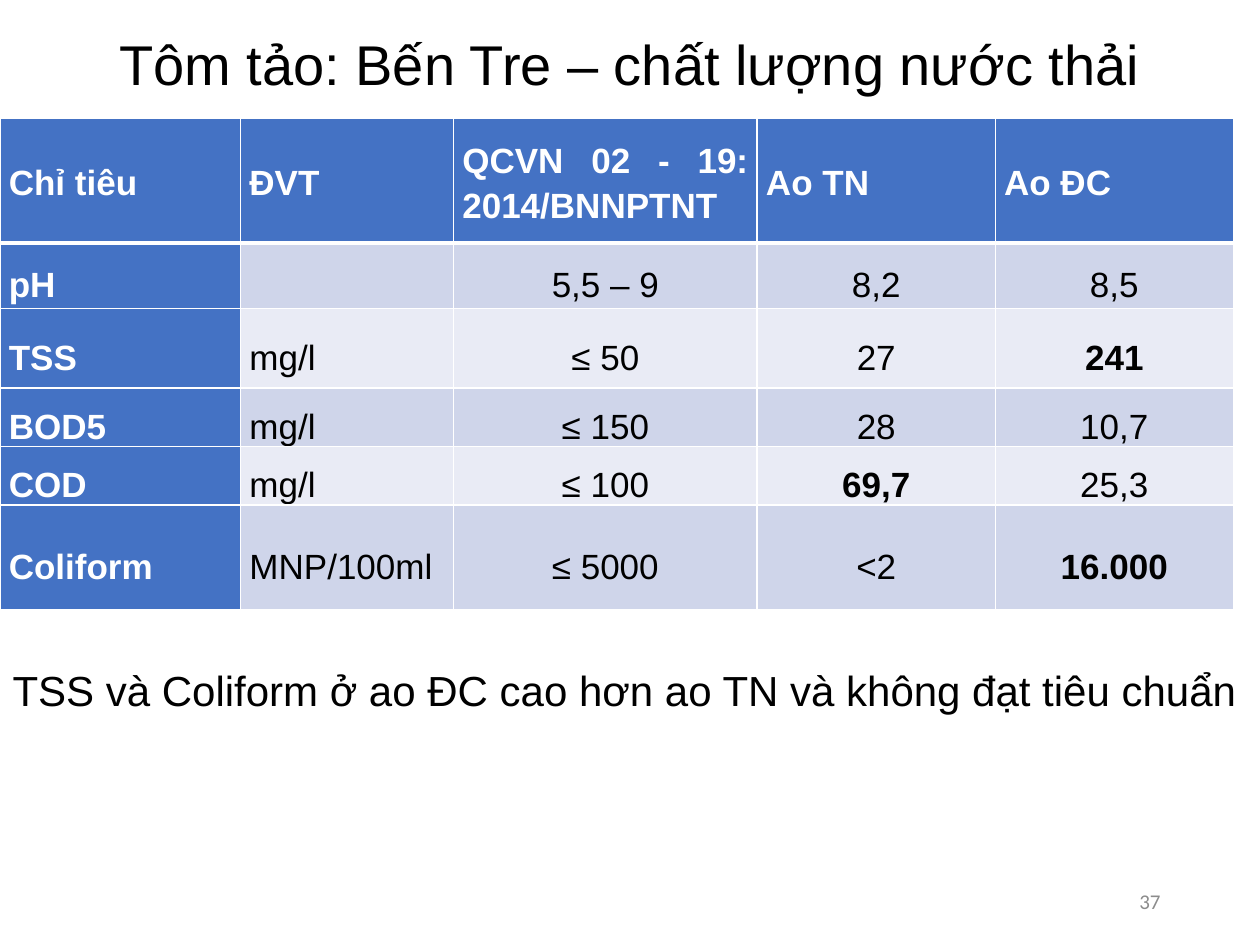
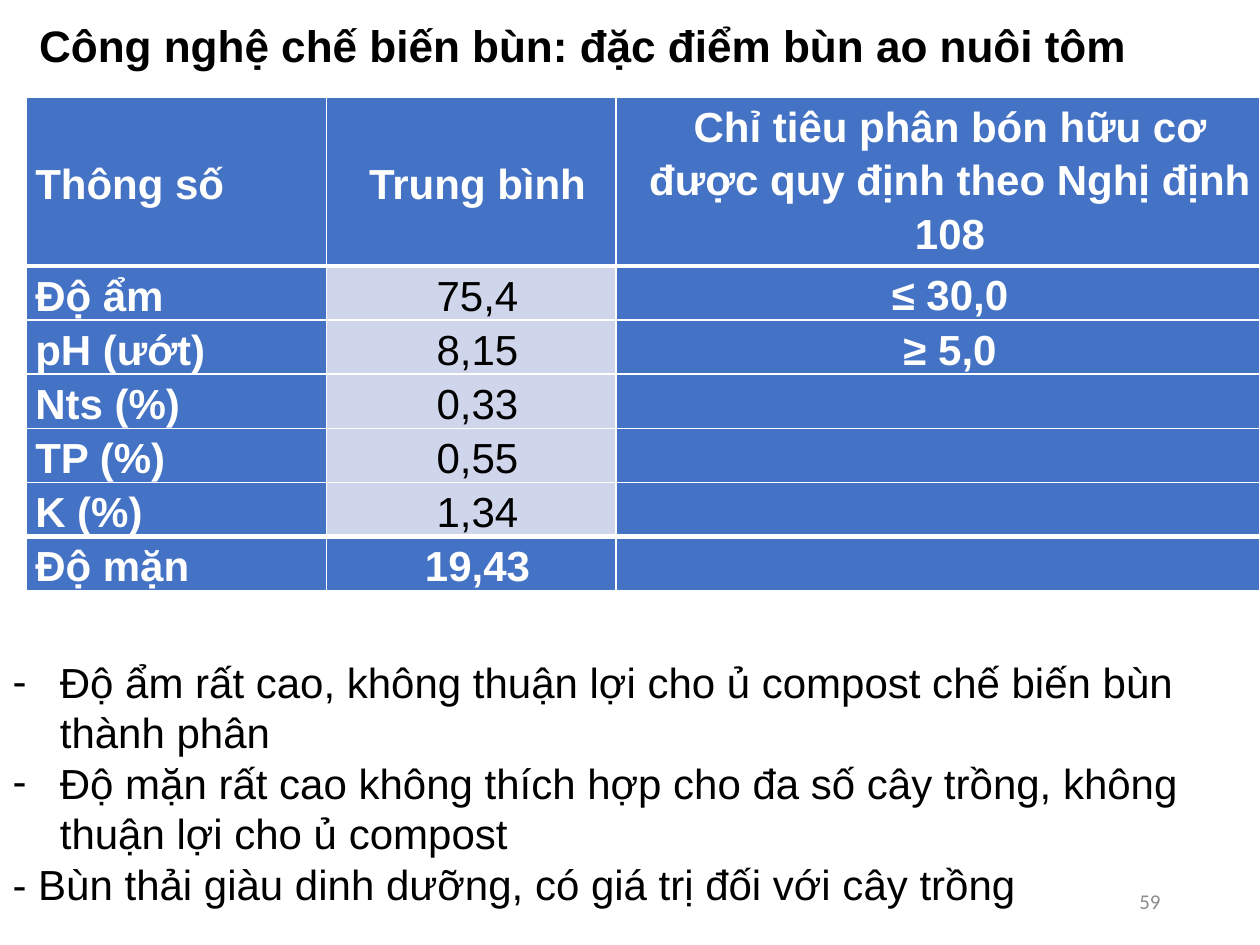
from lxml.etree import SubElement as Sub
from pptx import Presentation
from pptx.dml.color import RGBColor as RGB
from pptx.enum.text import MSO_ANCHOR as Anchor, MSO_AUTO_SIZE as Fit, PP_ALIGN as Align
from pptx.oxml.ns import qn
from pptx.util import Inches, Pt

BLACK = RGB(0x00, 0x00, 0x00)
WHITE = RGB(0xFF, 0xFF, 0xFF)
GREY = RGB(0x8C, 0x8C, 0x8C)
BLUE = RGB(0x44, 0x72, 0xC4)
BAND = RGB(0xCF, 0xD5, 0xEA)
PALE = RGB(0xE9, 0xEB, 0xF5)

# Grid: 100 columns by 75 rows of square units
deck = Presentation()
deck.slide_width, deck.slide_height = Inches(10), Inches(7.5)
UNIT = deck.slide_width / 100


def write(para, text, size=24, color=BLACK, bold=False, font="Arial",
          align=Align.LEFT, line=1.0, before=0, left=0, hang=0, mark=None):
    """Fill one paragraph with formatted text; left and hang are in grid units."""
    para.alignment, para.line_spacing, para.space_before = align, line, Pt(before)
    props = para._p.get_or_add_pPr()
    props.set("marL", str(int(left * UNIT)))
    props.set("indent", str(int(-hang * UNIT)))
    if mark:
        Sub(props, qn("a:buChar")).set("char", mark)
    else:
        Sub(props, qn("a:buNone"))
    run = para.add_run()
    run.text = text
    run.font.name, run.font.size, run.font.bold = font, Pt(size), bold
    run.font.color.rgb = color


def place(shape, box, anchor):
    """Set a text shape on the grid."""
    shape.left, shape.top, shape.width, shape.height = [int(n * UNIT) for n in box]
    frame = shape.text_frame
    frame.word_wrap, frame.auto_size, frame.vertical_anchor = True, Fit.NONE, anchor
    return frame


# Content of the two slides
water = dict(
    title="Tôm tảo: Bến Tre – chất lượng nước thải",
    head=dict(size=32, align=Align.CENTER), head_box=(6.9, 1.3, 86.2, 8.1),
    spot=(0, 9.4), cols=(19.1, 16.9, 24.1, 18.9, 18.9),
    rows=(9.9, 5.2, 6.3, 3.9, 3.9, 8.3),
    size=20, pad=0.7, line=1.5, before=0, lefts=(0,) * 5,
    aligns=(Align.JUSTIFY,) * 2 + (Align.CENTER,) * 3,
    head_aligns=(Align.JUSTIFY,) * 5, anchors=(Anchor.MIDDLE,) * 5,
    blue_cols={0}, foot=False, bands=(PALE, BAND), strong={"241", "69,7", "16.000"},
    cells=[
        ("Chỉ tiêu", "ĐVT", "QCVN 02 - 19: 2014/BNNPTNT", "Ao TN", "Ao ĐC"),
        ("pH", "", "5,5 – 9", "8,2", "8,5"),
        ("TSS", "mg/l", "≤ 50", "27", "241"),
        ("BOD5", "mg/l", "≤ 150", "28", "10,7"),
        ("COD", "mg/l", "≤ 100", "69,7", "25,3"),
        ("Coliform", "MNP/100ml", "≤ 5000", "<2", "16.000"),
    ],
    note_box=(0, 52.2, 100, 5),
    notes=[("TSS và Coliform ở ao ĐC cao hơn ao TN và không đạt tiêu chuẩn", {})],
    page="37")

dash = dict(left=3.75, hang=3.75, mark="-")
mud_aligns = (Align.JUSTIFY, Align.CENTER, Align.CENTER)
mud = dict(
    title="Công nghệ chế biến bùn: đặc điểm bùn ao nuôi tôm",
    head=dict(size=25.2, bold=True), head_box=(2.1, 0, 97.9, 7.7),
    spot=(2.1, 7.7), cols=(23.8, 23, 51.1), rows=(13.4,) + (4.3,) * 6,
    size=24, pad=0, line=1.15, before=3, lefts=(0.7, 1, 1.9),
    aligns=mud_aligns, head_aligns=mud_aligns,
    anchors=(Anchor.MIDDLE, Anchor.MIDDLE, Anchor.TOP),
    blue_cols={0, 2}, foot=True, bands=(BAND, BAND), strong=set(),
    cells=[
        ("Thông số", "Trung bình",
         "Chỉ tiêu phân bón hữu cơ được quy định theo Nghị định 108"),
        ("Độ ẩm", "75,4", "≤ 30,0"),
        ("pH (ướt)", "8,15", "≥ 5,0"),
        ("Nts (%)", "0,33", ""),
        ("TP (%)", "0,55", ""),
        ("K (%)", "1,34", ""),
        ("Độ mặn", "19,43", ""),
    ],
    note_box=(0, 51.6, 100, 21.2),
    notes=[
        ("Độ ẩm rất cao, không thuận lợi cho ủ compost chế biến bùn thành phân", dash),
        ("Độ mặn rất cao không thích hợp cho đa số cây trồng, "
         "không thuận lợi cho ủ compost", dash),
        ("- Bùn thải giàu dinh dưỡng, có giá trị đối với cây trồng", {}),
    ],
    page="59")

for part in (water, mud):
    slide = deck.slides.add_slide(deck.slide_layouts[1])

    # Title
    frame = place(slide.shapes.title, part["head_box"], Anchor.MIDDLE)
    write(frame.paragraphs[0], part["title"], line=0.9, **part["head"])

    # Table
    cols, rows, cells = part["cols"], part["rows"], part["cells"]
    x, y = part["spot"]
    grid = slide.shapes.add_table(
        len(rows), len(cols), int(x * UNIT), int(y * UNIT),
        int(sum(cols) * UNIT), int(sum(rows) * UNIT)).table
    for i, width in enumerate(cols):
        grid.columns[i].width = int(width * UNIT)
    last = len(rows) - 1
    thick = {1, last} if part["foot"] else {1}  # rows with a thick line above

    for r, height in enumerate(rows):
        grid.rows[r].height = int(height * UNIT)
        for c, text in enumerate(cells[r]):
            cell = grid.cell(r, c)
            cell.margin_left = cell.margin_right = int(part["pad"] * UNIT)
            cell.margin_top = cell.margin_bottom = 0
            cell.vertical_anchor = part["anchors"][c]

            # White borders
            props = cell._tc.get_or_add_tcPr()
            wide = {"lnT": r in thick, "lnB": r + 1 in thick}
            for side in ("lnL", "lnR", "lnT", "lnB"):
                edge = Sub(props, qn("a:" + side))
                edge.set("w", str(Pt(3 if wide.get(side) else 1)))
                fill = Sub(edge, qn("a:solidFill"))
                Sub(fill, qn("a:srgbClr")).set("val", str(WHITE))

            # Fill and text
            blue = r == 0 or c in part["blue_cols"] or (part["foot"] and r == last)
            cell.fill.solid()
            cell.fill.fore_color.rgb = BLUE if blue else part["bands"][r % 2]
            if text:
                aligns = part["aligns"] if r else part["head_aligns"]
                write(cell.text_frame.paragraphs[0], text, size=part["size"],
                      color=WHITE if blue else BLACK,
                      bold=blue or text in part["strong"], align=aligns[c],
                      line=part["line"] if r else 1.15,
                      before=part["before"] if r else 0, left=part["lefts"][c])

    # Notes under the table
    frame = place(slide.placeholders[1], part["note_box"], Anchor.TOP)
    for i, (text, look) in enumerate(part["notes"]):
        para = frame.add_paragraph() if i else frame.paragraphs[0]
        write(para, text, **look)

    # Page number
    frame = place(slide.shapes.add_textbox(0, 0, 0, 0), (70.6, 69.5, 22.5, 4),
                  Anchor.MIDDLE)
    write(frame.paragraphs[0], part["page"], size=12, color=GREY,
          font="Calibri", align=Align.RIGHT)

deck.save("out.pptx")
